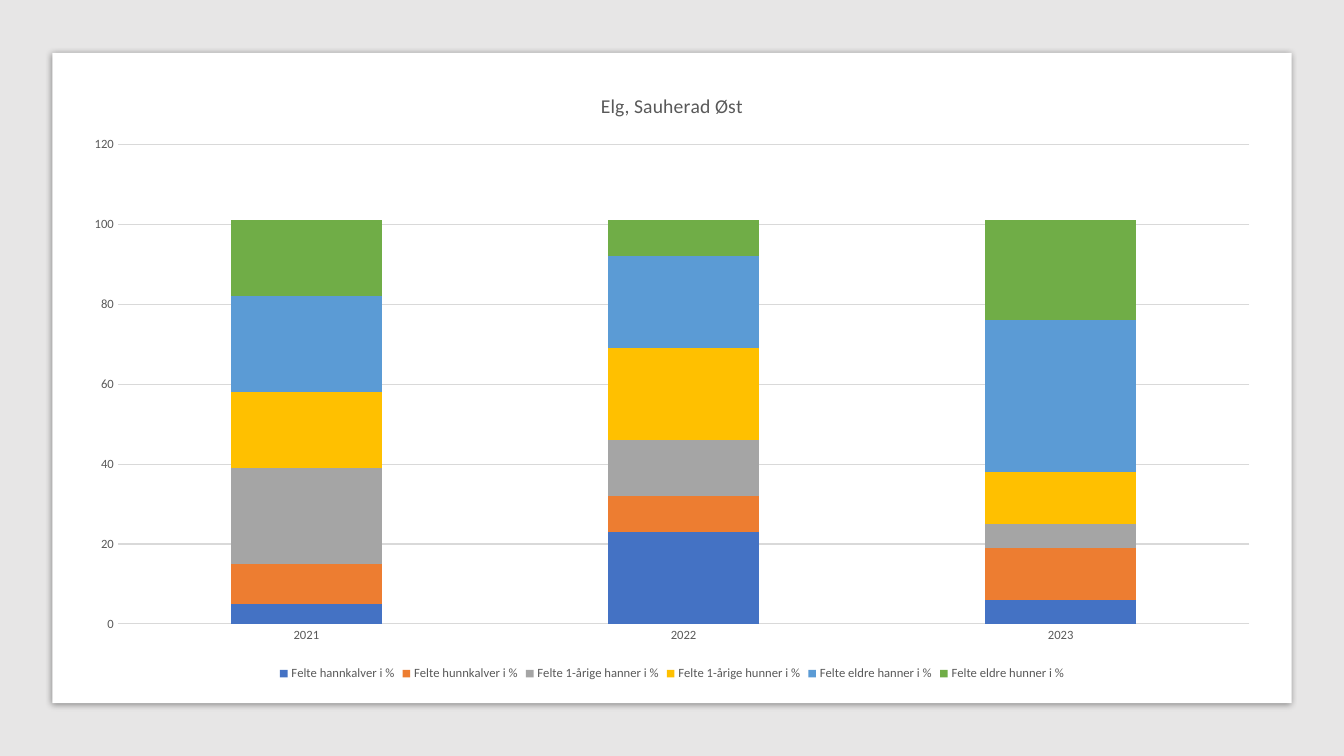
import pptx
import pptx.chart.data
import pptx.dml.color
import pptx.enum.chart
import pptx.enum.shapes
import pptx.oxml
import pptx.util

RGBColor = pptx.dml.color.RGBColor
Pt = pptx.util.Pt

WIDTH, HEIGHT = pptx.util.Inches(13.33), pptx.util.Inches(7.5)
FONT = "Calibri"
BACKDROP = RGBColor(0xE7, 0xE6, 0xE6)
WHITE = RGBColor(0xFF, 0xFF, 0xFF)
TEXT = RGBColor(0x59, 0x59, 0x59)
RULE = RGBColor(0xD9, 0xD9, 0xD9)
BLUE = RGBColor(0x44, 0x72, 0xC4)
ORANGE = RGBColor(0xED, 0x7D, 0x31)
GREY = RGBColor(0xA5, 0xA5, 0xA5)
YELLOW = RGBColor(0xFF, 0xC0, 0x00)
LIGHT_BLUE = RGBColor(0x5B, 0x9B, 0xD5)
GREEN = RGBColor(0x70, 0xAD, 0x47)

YEARS = ["2021", "2022", "2023"]
SERIES = [
    ("Felte hannkalver i %", (5, 23, 6), BLUE),
    ("Felte hunnkalver i %", (10, 9, 13), ORANGE),
    ("Felte 1-årige hanner i %", (24, 14, 6), GREY),
    ("Felte 1-årige hunner i %", (19, 23, 13), YELLOW),
    ("Felte eldre hanner i %", (24, 23, 38), LIGHT_BLUE),
    ("Felte eldre hunner i %", (19, 9, 25), GREEN),
]


def centred_box(width_in, height_in):
    w, h = pptx.util.Inches(width_in), pptx.util.Inches(height_in)
    return (WIDTH - w) // 2, (HEIGHT - h) // 2, w, h


def format_font(font, size=9, color=TEXT, bold=False):
    font.name = FONT
    font.size = Pt(size)
    font.bold = bold
    font.color.rgb = color


def write_text(tf, text, **fmt):
    r = tf.paragraphs[0].add_run()
    r.text = text
    format_font(r.font, **fmt)


def add_panel(slide, box, color):
    sp = slide.shapes.add_shape(pptx.enum.shapes.MSO_SHAPE.RECTANGLE, *box)
    sp.shadow.inherit = False
    sp.fill.solid()
    sp.fill.fore_color.rgb = color
    sp.line.fill.background()
    return sp


def add_shadow(sp, blur, distance, alpha):
    effects = sp._element.spPr.find(pptx.oxml.ns.qn("a:effectLst"))
    effects.append(pptx.oxml.parse_xml(
        f'<a:outerShdw {pptx.oxml.ns.nsdecls("a")} blurRad="{Pt(blur)}" '
        f'dist="{Pt(distance)}" dir="5400000" algn="t" rotWithShape="0">'
        f'<a:srgbClr val="000000"><a:alpha val="{alpha * 1000}"/></a:srgbClr>'
        '</a:outerShdw>'))


def format_line(line):
    line.color.rgb = RULE
    line.width = Pt(0.75)


def format_axes(chart):
    for axis in (chart.category_axis, chart.value_axis):
        axis.major_tick_mark = pptx.enum.chart.XL_TICK_MARK.NONE
        axis.minor_tick_mark = pptx.enum.chart.XL_TICK_MARK.NONE
        format_font(axis.tick_labels.font)
    format_line(chart.category_axis.format.line)
    chart.value_axis.format.line.fill.background()
    chart.value_axis.has_major_gridlines = True
    format_line(chart.value_axis.major_gridlines.format.line)


def add_stacked_chart(slide, box, title):
    data = pptx.chart.data.CategoryChartData()
    data.categories = YEARS
    for name, values, _ in SERIES:
        data.add_series(name, values)
    chart = slide.shapes.add_chart(
        pptx.enum.chart.XL_CHART_TYPE.COLUMN_STACKED, *box, data).chart
    chart.font.name = FONT
    chart.font.size = Pt(10)
    chart.has_title = True
    write_text(chart.chart_title.text_frame, title, size=14)
    chart.chart_title.include_in_layout = False
    chart.has_legend = True
    chart.legend.position = pptx.enum.chart.XL_LEGEND_POSITION.BOTTOM
    chart.legend.include_in_layout = False
    format_font(chart.legend.font)
    format_axes(chart)
    plot = chart.plots[0]
    plot.gap_width = 150
    plot.overlap = 100
    plot.vary_by_categories = False
    for series, (_, _, color) in zip(plot.series, SERIES):
        series.format.fill.solid()
        series.format.fill.fore_color.rgb = color


def main():
    prs = pptx.Presentation()
    prs.slide_width, prs.slide_height = WIDTH, HEIGHT
    slide = prs.slides.add_slide(prs.slide_layouts[6])
    add_panel(slide, (0, 0, WIDTH, HEIGHT), BACKDROP)
    card = add_panel(slide, centred_box(12.29, 6.45), WHITE)
    add_shadow(card, blur=5, distance=1.4, alpha=43)
    add_stacked_chart(slide, centred_box(11.93, 6.09), "Elg, Sauherad Øst")
    prs.save("out.pptx")


if __name__ == "__main__":
    main()
